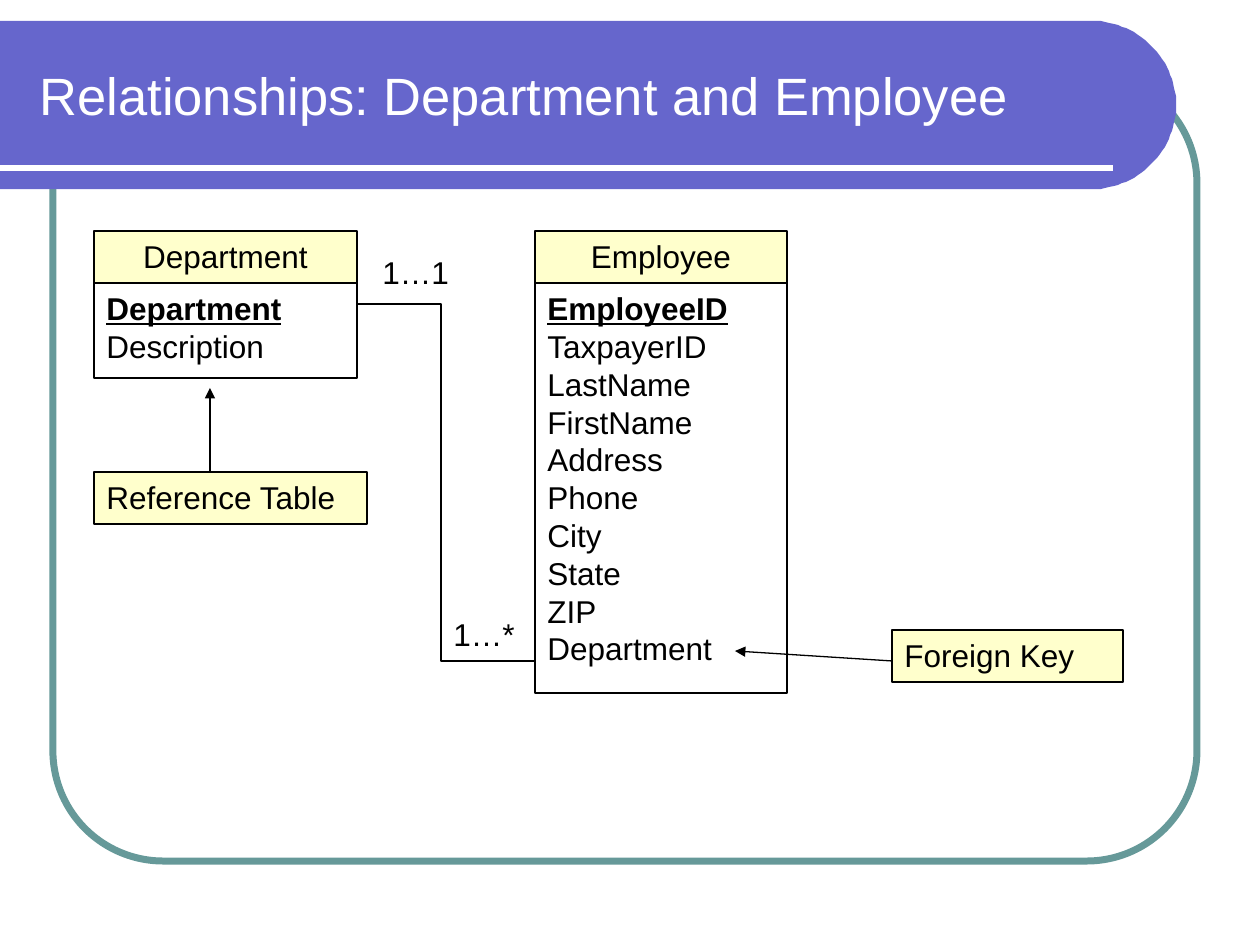
from dataclasses import dataclass
from math import cos, pi, sin

from lxml.etree import SubElement
from pptx import Presentation
from pptx.dml.color import RGBColor
from pptx.enum.shapes import MSO_CONNECTOR, MSO_SHAPE
from pptx.enum.text import MSO_ANCHOR, MSO_AUTO_SIZE, PP_ALIGN
from pptx.oxml.ns import qn
from pptx.util import Emu, Pt

PIXELS_PER_INCH = 126
SCALE = 914400 / PIXELS_PER_INCH
FONT = "Arial"
BLACK, WHITE = "000000", "FFFFFF"
VIOLET, TEAL, CREAM = "6666CC", "669999", "FFFFCC"
LINE_HEIGHT = 1.2
HEADER_HEIGHT = 52

Point = tuple[int, int]


@dataclass(frozen=True)
class Box:
    left: int
    top: int
    width: int
    height: int


@dataclass(frozen=True)
class Entity:
    header: Box
    body_height: int
    name: str
    fields: tuple[str, ...]


@dataclass(frozen=True)
class Label:
    box: Box
    text: str
    fill: str | None = None
    line: str | None = None


@dataclass(frozen=True)
class Stroke:
    start: Point
    end: Point
    color: str = BLACK
    weight: float = 0.75
    arrow: bool = False


ENTITIES = (
    Entity(Box(535, 231, 252, HEADER_HEIGHT), 410, "Employee",
           ("EmployeeID", "TaxpayerID", "LastName", "FirstName", "Address",
            "Phone", "City", "State", "ZIP", "Department")),
    Entity(Box(94, 231, 263, HEADER_HEIGHT), 95, "Department",
           ("Department", "Description")),
)
LABELS = (
    Label(Box(370, 247, 92, 50), "1…1"),
    Label(Box(441, 609, 87, 50), "1…*"),
    Label(Box(892, 630, 231, HEADER_HEIGHT), "Foreign Key", CREAM, BLACK),
    Label(Box(94, 472, 273, HEADER_HEIGHT), "Reference Table", CREAM, BLACK),
)
ARROWS = (
    Stroke((892, 661), (735, 651), arrow=True),
    Stroke((210, 472), (210, 388), arrow=True),
)
RELATIONSHIP = [(357, 304), (441, 304), (441, 661), (535, 661)]


def px(value: float) -> Emu:
    return Emu(round(value * SCALE))


def rgb(color: str) -> RGBColor:
    return RGBColor.from_string(color)


def place(shape, box: Box) -> None:
    shape.left, shape.top = px(box.left), px(box.top)
    shape.width, shape.height = px(box.width), px(box.height)


def paint(shape, fill: str | None = None, line: str | None = None,
          weight: float = 0.75) -> None:
    shape.shadow.inherit = False
    if fill:
        shape.fill.solid()
        shape.fill.fore_color.rgb = rgb(fill)
    else:
        shape.fill.background()
    if line:
        shape.line.color.rgb = rgb(line)
        shape.line.width = Pt(weight)
    else:
        shape.line.fill.background()


def write(shape, *lines: str, size: int = 18, color: str = BLACK,
          align=PP_ALIGN.LEFT, anchor=MSO_ANCHOR.TOP, wrap: bool = True,
          key_first: bool = False) -> None:
    """Fill a shape with one paragraph per line; key_first marks line one as a key."""
    frame = shape.text_frame
    frame.word_wrap = wrap
    frame.auto_size = MSO_AUTO_SIZE.NONE
    frame.vertical_anchor = anchor
    frame.text = "\n".join(lines)
    for index, paragraph in enumerate(frame.paragraphs):
        paragraph.alignment = align
        paragraph.line_spacing = Pt(size * LINE_HEIGHT)
        font = paragraph.runs[0].font
        font.name, font.size = FONT, Pt(size)
        font.color.rgb = rgb(color)
        font.bold = font.underline = key_first and index == 0


def add_box(slide, box: Box, kind=MSO_SHAPE.RECTANGLE, **style):
    shape = slide.shapes.add_shape(kind, 0, 0, 0, 0)
    place(shape, box)
    paint(shape, **style)
    return shape


def add_outline(slide, points: list[tuple[float, float]], close: bool, **style):
    builder = slide.shapes.build_freeform(*points[0], scale=SCALE)
    builder.add_line_segments(points[1:], close=close)
    shape = builder.convert_to_shape()
    paint(shape, **style)
    return shape


def add_stroke(slide, stroke: Stroke):
    ends = [px(value) for value in stroke.start + stroke.end]
    connector = slide.shapes.add_connector(MSO_CONNECTOR.STRAIGHT, *ends)
    connector.line.color.rgb = rgb(stroke.color)
    connector.line.width = Pt(stroke.weight)
    if stroke.arrow:
        SubElement(connector.line._get_or_add_ln(), qn("a:tailEnd"), type="triangle")
    SubElement(connector.element.spPr, qn("a:effectLst"))
    return connector


def add_banner(slide):
    """Draw the title bar, whose right end is a half circle."""
    top, radius, center_x, steps = 21, 84, 1092, 60
    angles = [pi * step / steps - pi / 2 for step in range(steps + 1)]
    arc = [(center_x + radius * cos(angle), top + radius + radius * sin(angle))
           for angle in angles]
    return add_outline(slide, [(0, top), *arc, (0, top + 2 * radius)],
                       close=True, fill=VIOLET)


def add_title(slide, text: str) -> None:
    title = slide.shapes.title
    border = add_box(slide, Box(53, 73, 1144, 788), MSO_SHAPE.ROUNDED_RECTANGLE,
                     line=TEAL, weight=4)
    border.adjustments[0] = 0.14
    banner = add_banner(slide)
    rule = add_stroke(slide, Stroke((0, 168), (1113, 168), WHITE, 3))
    for backdrop in (border, banner, rule):
        title.element.addprevious(backdrop.element)
    place(title, Box(27, 32, 1105, 126))
    write(title, text, size=30, color=WHITE, anchor=MSO_ANCHOR.MIDDLE)


def add_entity(slide, entity: Entity) -> None:
    header = entity.header
    write(add_box(slide, header, fill=CREAM, line=BLACK), entity.name,
          align=PP_ALIGN.CENTER)
    body = Box(header.left, header.top + header.height, header.width,
               entity.body_height)
    write(add_box(slide, body, line=BLACK), *entity.fields, wrap=False,
          key_first=True)


def add_label(slide, label: Label) -> None:
    if label.fill:
        shape = add_box(slide, label.box, fill=label.fill, line=label.line)
    else:
        shape = slide.shapes.add_textbox(0, 0, 0, 0)
        place(shape, label.box)
    write(shape, label.text, wrap=label.fill is not None)


def main() -> None:
    presentation = Presentation()
    presentation.slide_width, presentation.slide_height = px(1260), px(945)
    slide = presentation.slides.add_slide(presentation.slide_layouts[5])
    add_title(slide, "Relationships: Department and Employee")
    for entity in ENTITIES:
        add_entity(slide, entity)
    add_outline(slide, RELATIONSHIP, close=False, line=BLACK)
    for label in LABELS:
        add_label(slide, label)
    for arrow in ARROWS:
        add_stroke(slide, arrow)
    presentation.save("out.pptx")


if __name__ == "__main__":
    main()
